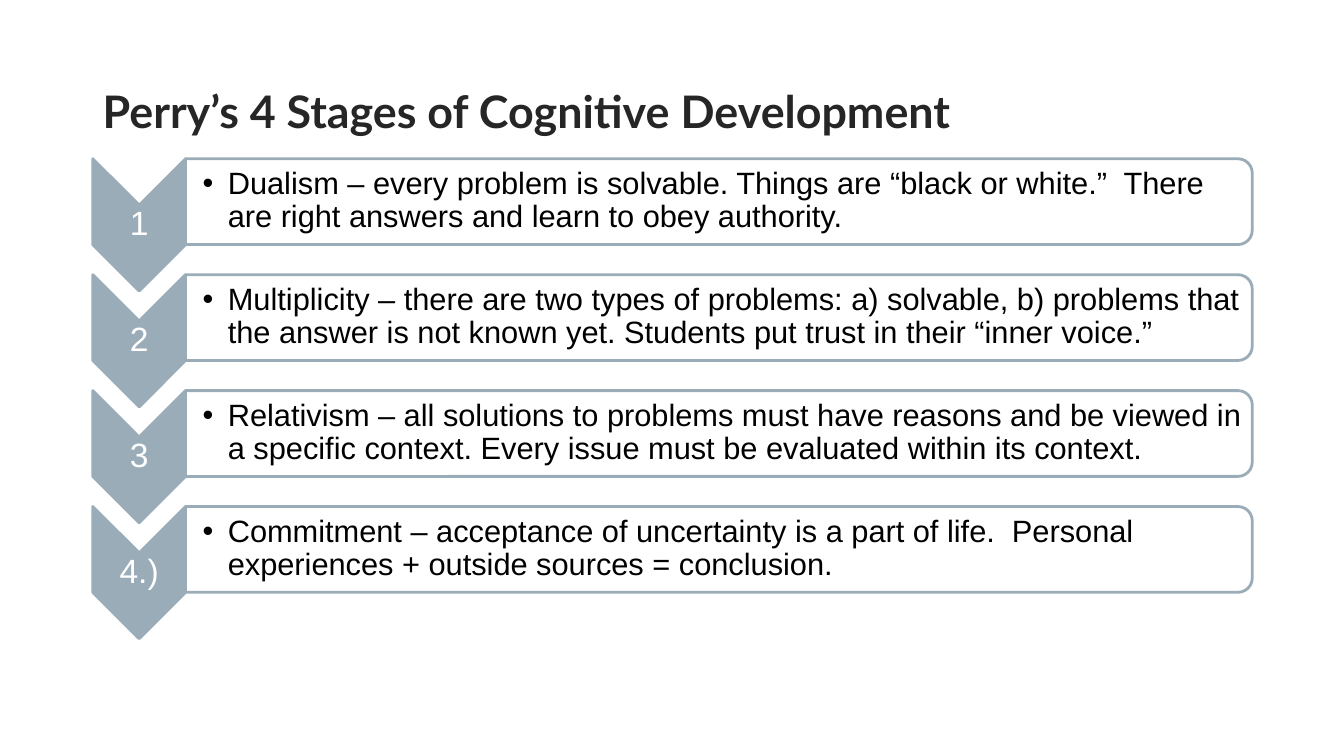
"""Build a slide of Perry's four stages of cognitive development."""
from dataclasses import dataclass

from lxml import etree
from pptx import Presentation
from pptx.dml.color import RGBColor
from pptx.enum.shapes import MSO_SHAPE
from pptx.enum.text import MSO_ANCHOR, PP_ALIGN
from pptx.oxml.ns import qn
from pptx.util import Inches, Pt

CHEVRON = MSO_SHAPE.CHEVRON
ROUND = MSO_SHAPE.ROUND_2_SAME_RECTANGLE
MIDDLE = MSO_ANCHOR.MIDDLE
LEFT = PP_ALIGN.LEFT
CENTER = PP_ALIGN.CENTER
COL = Inches(0.92)
ROW = Inches(1.15)
TOP = 1.37


@dataclass(frozen=True)
class Font:
    name: str
    size: int
    color: str
    bold: bool = False


@dataclass(frozen=True)
class Theme:
    steel: str = "9AACB8"
    white: str = "FFFFFF"
    black: str = "000000"
    opaque: int = 90
    line: float = 2
    title: Font = Font("Lato", 32, "262626", True)
    label: Font = Font("Arial", 24, "FFFFFF")
    body: Font = Font("Arial", 22, "000000")


@dataclass(frozen=True)
class Box:
    x: float
    y: float
    w: float
    h: float

    def place(self) -> tuple[int, int, int, int]:
        return (round(self.x * COL), round(self.y * ROW),
                round(self.w * COL), round(self.h * ROW))


@dataclass(frozen=True)
class Stage:
    label: str
    text: str


THEME = Theme()
STAGES = (
    Stage("1", "Dualism – every problem is solvable. Things are “black or white.”  "
               "There are right answers and learn to obey authority."),
    Stage("2", "Multiplicity – there are two types of problems: a) solvable, b) problems "
               "that the answer is not known yet. Students put trust in their “inner voice.”"),
    Stage("3", "Relativism – all solutions to problems must have reasons and be viewed in "
               "a specific context. Every issue must be evaluated within its context."),
    Stage("4.)", "Commitment – acceptance of uncertainty is a part of life.  Personal "
                 "experiences + outside sources = conclusion."),
)


def add_text(slide, box: Box, text: str, font: Font, inset: tuple, align=LEFT):
    frame = slide.shapes.add_textbox(*box.place()).text_frame
    left, top, right, bottom = map(Inches, inset)
    form = {"word_wrap": True, "vertical_anchor": MIDDLE, "margin_left": left,
            "margin_top": top, "margin_right": right, "margin_bottom": bottom}
    for key, value in form.items():
        setattr(frame, key, value)
    para = frame.paragraphs[0]
    para.alignment = align
    para.line_spacing = 0.9
    run = para.add_run()
    run.text = text
    for key in ("name", "size", "bold"):
        value = getattr(font, key)
        setattr(run.font, key, Pt(value) if key == "size" else value)
    run.font.color.rgb = RGBColor.from_string(font.color)
    return para


def add_bullet(para) -> None:
    props = para._p.get_or_add_pPr()
    for key, value in {"marL": Inches(0.25), "indent": -Inches(0.25)}.items():
        props.set(key, str(value))
    tint = etree.SubElement(props, qn("a:buClr"))
    etree.SubElement(tint, qn("a:srgbClr"), val=THEME.black)
    etree.SubElement(props, qn("a:buFont"), typeface=THEME.body.name)
    etree.SubElement(props, qn("a:buChar"), char="•")


def add_turned(slide, kind, box: Box, fill: str):
    x, y, w, h = box.place()
    shape = slide.shapes.add_shape(kind, x + (w - h) // 2, y + (h - w) // 2, h, w)
    shape.rotation = 90
    shape.shadow.inherit = False
    shape.fill.solid()
    shape.fill.fore_color.rgb = RGBColor.from_string(fill)
    shape.line.color.rgb = RGBColor.from_string(THEME.steel)
    shape.line.width = Pt(THEME.line)
    return shape


def add_stage(slide, stage: Stage, top: float) -> None:
    slim = (0.02, 0.02, 0.02, 0.02)
    add_turned(slide, CHEVRON, Box(1, top, 1, 1.14), THEME.steel)
    add_text(slide, Box(1, top + 0.4, 1, 0.34), stage.label, THEME.label, slim, CENTER)
    panel = add_turned(slide, ROUND, Box(2, top, 11.5, 0.74), THEME.white)
    tone = panel._element.spPr.find(qn("a:solidFill"))[0]
    etree.SubElement(tone, qn("a:alpha"), val=str(THEME.opaque * 1000))
    para = add_text(slide, Box(2, top + 0.03, 11.46, 0.67), stage.text,
                    THEME.body, (0.17, 0.02, 0.02, 0.02))
    add_bullet(para)


def main() -> None:
    deck = Presentation()
    deck.slide_width = Inches(13.33)
    deck.slide_height = Inches(7.5)
    slide = deck.slides.add_slide(deck.slide_layouts[6])
    add_text(slide, Box(1, 0.35, 12.5, 1.26), "Perry’s 4 Stages of Cognitive Development",
             THEME.title, (0.1, 0.05, 0.1, 0.05))
    for row, stage in enumerate(STAGES):
        add_stage(slide, stage, TOP + row)
    deck.save("out.pptx")


if __name__ == "__main__":
    main()
